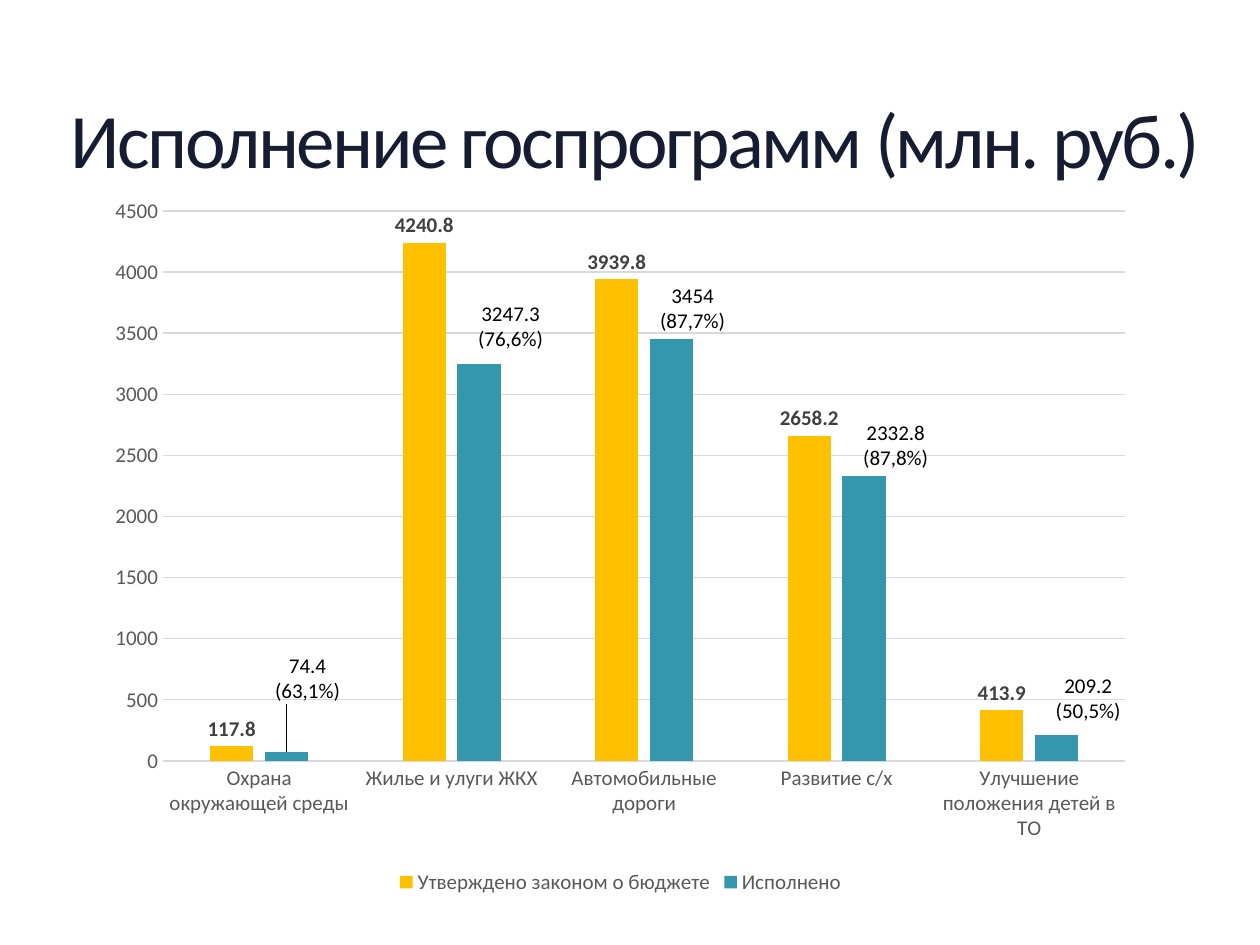
from lxml import etree
from pptx import Presentation
from pptx.chart.data import CategoryChartData
from pptx.dml.color import RGBColor
from pptx.enum.chart import XL_CHART_TYPE as ChartType
from pptx.enum.chart import XL_LABEL_POSITION as LabelPosition
from pptx.enum.chart import XL_LEGEND_POSITION as LegendPosition
from pptx.enum.chart import XL_TICK_MARK as TickMark
from pptx.enum.text import MSO_ANCHOR as Anchor
from pptx.enum.text import PP_ALIGN as Align
from pptx.oxml.ns import qn
from pptx.util import Inches, Pt

FONT = "Calibri"
NAVY = RGBColor(0x16, 0x1D, 0x32)
GOLD = RGBColor(0xFF, 0xC0, 0x00)
TEAL = RGBColor(0x34, 0x97, 0xAE)
BLACK = RGBColor(0x00, 0x00, 0x00)
DARK_GRAY = RGBColor(0x40, 0x40, 0x40)
GRAY = RGBColor(0x59, 0x59, 0x59)
LIGHT_GRAY = RGBColor(0xD9, 0xD9, 0xD9)

PROGRAMS = [
    ("Охрана окружающей среды", 117.8, 74.4, "63,1%", (0.02, -0.06)),
    ("Жилье и улуги ЖКХ", 4240.8, 3247.3, "76,6%", (0.03, -0.01)),
    ("Автомобильные дороги", 3939.8, 3454, "87,7%", (0.02, 0)),
    ("Развитие с/х", 2658.2, 2332.8, "87,8%", (0.03, 0)),
    ("Улучшение положения детей в ТО", 413.9, 209.2, "50,5%", (0.03, -0.01)),
]


def style_font(font, size, color, bold=False):
    font.name = FONT
    font.size = Pt(size)
    font.bold = bold
    font.color.rgb = color


def style_line(line, color):
    line.color.rgb = color
    line.width = Pt(0.75)


def add_layout(parent, index, **settings):
    for old in parent.findall(qn("c:layout")):
        parent.remove(old)
    layout = etree.Element(qn("c:layout"))
    manual = etree.SubElement(layout, qn("c:manualLayout"))
    for name, value in settings.items():
        etree.SubElement(manual, qn(f"c:{name}")).set("val", str(value))
    parent.insert(index, layout)


def place_title(page, left, top, width, height):
    title = page.shapes.title
    title.left, title.top, title.width, title.height = left, top, width, height
    frame = title.text_frame
    frame.margin_left = frame.margin_right = 0
    frame.margin_top = frame.margin_bottom = 0
    frame.vertical_anchor = Anchor.MIDDLE
    frame.word_wrap = True
    para = frame.paragraphs[0]
    para.alignment = Align.CENTER
    para.line_spacing = 0.9
    span = para.add_run()
    span.text = "Исполнение госпрограмм (млн. руб.)"
    style_font(para.font, 44, NAVY)
    span.font._element.set("spc", "-150")


def style_axes(chart):
    categories, values = chart.category_axis, chart.value_axis
    for axis in (categories, values):
        axis.major_tick_mark = axis.minor_tick_mark = TickMark.NONE
        style_font(axis.tick_labels.font, 12, GRAY)
    style_line(categories.format.line, LIGHT_GRAY)
    values.format.line.fill.background()
    values.minimum_scale, values.maximum_scale = 0, 4500
    values.major_unit = 500
    style_line(values.major_gridlines.format.line, LIGHT_GRAY)


def style_series(series, fill, label_color):
    series.format.fill.solid()
    series.format.fill.fore_color.rgb = fill
    labels = series.data_labels
    labels.show_value = True
    labels.position = LabelPosition.OUTSIDE_END
    style_font(labels.font, 12, label_color, bold=True)


def label_execution(series):
    for index, (_, _, done, share, _) in enumerate(PROGRAMS):
        label = series.points[index].data_label
        label.text_frame.text = f"{done}\n({share})"
        label.position = LabelPosition.OUTSIDE_END
        for para in label.text_frame.paragraphs:
            for span in para.runs:
                style_font(span.font, 12, BLACK)
    boxes = series.data_labels._element.findall(qn("c:dLbl"))
    for box, (*_, (shift_x, shift_y)) in zip(boxes, PROGRAMS):
        add_layout(box, 1, x=shift_x, y=shift_y)


def place_chart(page, left, top, width, height):
    data = CategoryChartData()
    names, approved, executed, _, _ = zip(*PROGRAMS)
    data.categories = names
    data.add_series("Утверждено законом о бюджете", approved)
    data.add_series("Исполнено", executed)
    chart = page.shapes.add_chart(
        ChartType.COLUMN_CLUSTERED, left, top, width, height, data
    ).chart
    chart.has_title = False
    style_font(chart.font, 10, BLACK)
    style_axes(chart)

    chart.has_legend = True
    chart.legend.position = LegendPosition.BOTTOM
    chart.legend.include_in_layout = False
    style_font(chart.legend.font, 12, GRAY)

    plot = chart.plots[0]
    plot.gap_width, plot.overlap = 219, -27
    plot.vary_by_categories = False
    budget, execution = plot.series
    style_series(budget, GOLD, DARK_GRAY)
    style_series(execution, TEAL, BLACK)
    label_execution(execution)
    plot_area = chart._chartSpace.find(".//" + qn("c:plotArea"))
    add_layout(plot_area, 0, layoutTarget="inner", xMode="edge", yMode="edge",
               x=0.065, y=0.036, w=0.915, h=0.77)


def main():
    deck = Presentation()
    deck.slide_width, deck.slide_height = Inches(10), Inches(7.5)
    page = deck.slides.add_slide(deck.slide_layouts[5])
    place_title(page, Inches(0.2), Inches(0.73), Inches(9.69), Inches(0.82))
    place_chart(page, Inches(0.75), Inches(1.47), Inches(8.35), Inches(5.67))
    deck.save("out.pptx")


if __name__ == "__main__":
    main()
